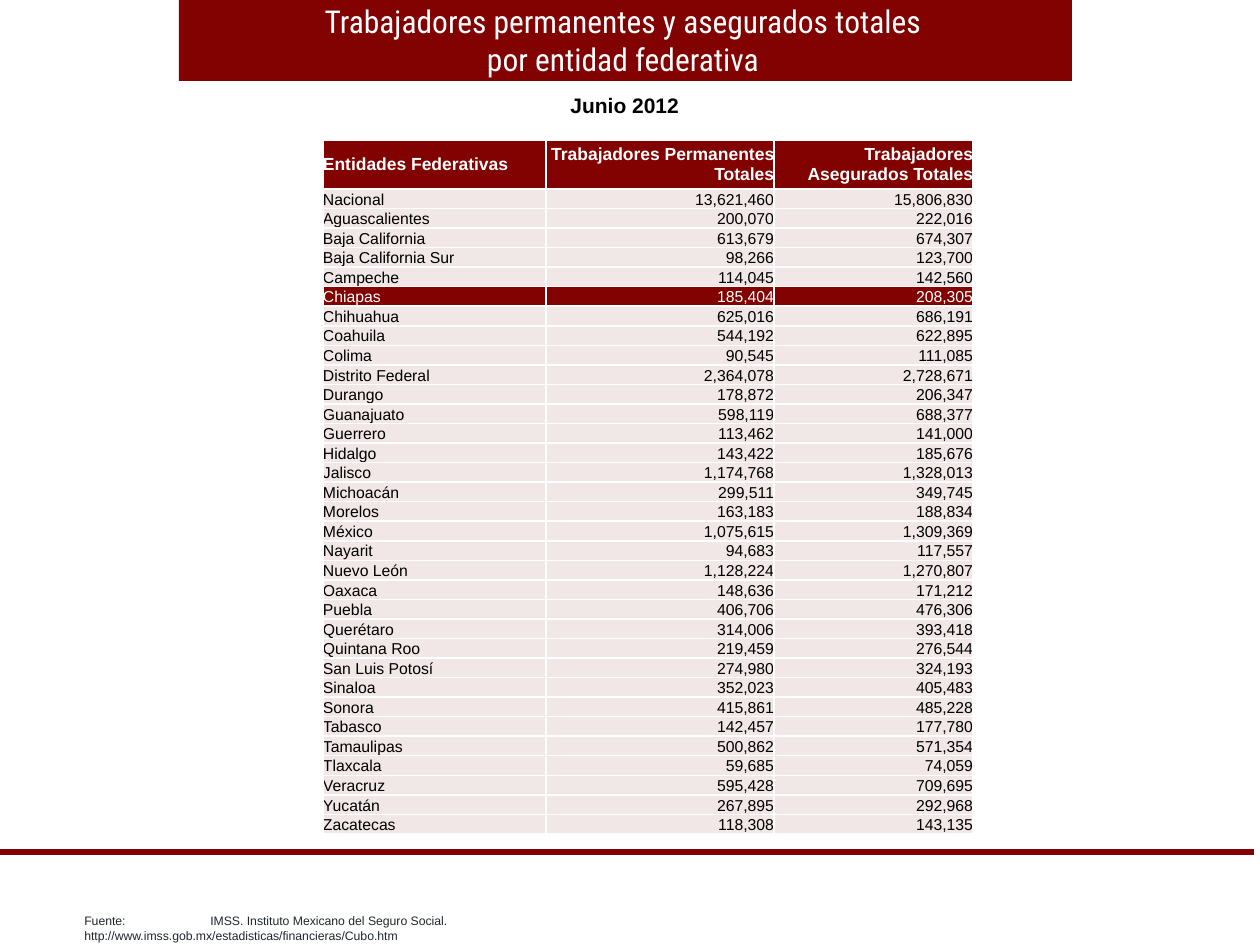
from lxml.etree import SubElement
from pptx import Presentation
from pptx.dml.color import RGBColor
from pptx.enum.shapes import MSO_SHAPE as Shape
from pptx.enum.text import MSO_ANCHOR as Anchor, MSO_AUTO_SIZE as Auto, PP_ALIGN as Align
from pptx.oxml.ns import qn
from pptx.util import Pt

SCALE = 914400 / 126
WINE, PALE, WHITE, BLACK, INK = "820101", "F1E7E7", "FFFFFF", "000000", "21272E"
HEADS = [
    "Entidades Federativas",
    "Trabajadores Permanentes Totales",
    "Trabajadores Asegurados Totales",
]
STATES = [
    ("Nacional", 13621460, 15806830),
    ("Aguascalientes", 200070, 222016),
    ("Baja California", 613679, 674307),
    ("Baja California Sur", 98266, 123700),
    ("Campeche", 114045, 142560),
    ("Chiapas", 185404, 208305),
    ("Chihuahua", 625016, 686191),
    ("Coahuila", 544192, 622895),
    ("Colima", 90545, 111085),
    ("Distrito Federal", 2364078, 2728671),
    ("Durango", 178872, 206347),
    ("Guanajuato", 598119, 688377),
    ("Guerrero", 113462, 141000),
    ("Hidalgo", 143422, 185676),
    ("Jalisco", 1174768, 1328013),
    ("Michoacán", 299511, 349745),
    ("Morelos", 163183, 188834),
    ("México", 1075615, 1309369),
    ("Nayarit", 94683, 117557),
    ("Nuevo León", 1128224, 1270807),
    ("Oaxaca", 148636, 171212),
    ("Puebla", 406706, 476306),
    ("Querétaro", 314006, 393418),
    ("Quintana Roo", 219459, 276544),
    ("San Luis Potosí", 274980, 324193),
    ("Sinaloa", 352023, 405483),
    ("Sonora", 415861, 485228),
    ("Tabasco", 142457, 177780),
    ("Tamaulipas", 500862, 571354),
    ("Tlaxcala", 59685, 74059),
    ("Veracruz", 595428, 709695),
    ("Yucatán", 267895, 292968),
    ("Zacatecas", 118308, 143135),
]


def px(n):
    return round(n * SCALE)


def tint(fill, color):
    fill.solid()
    fill.fore_color.rgb = RGBColor.from_string(color)


def assign(obj, values):
    for name, value in values.items():
        setattr(obj, name, value)


def style(para, color, size, align=Align.LEFT, name="Arial", bold=False):
    para.alignment = align
    assign(para.font, {"size": Pt(size), "name": name, "bold": bold})
    tint(para.font.fill, color)


def bar(slide, box):
    shape = slide.shapes.add_shape(Shape.RECTANGLE, *map(px, box))
    shape.shadow.inherit = False
    tint(shape.fill, WINE)
    shape.line.fill.background()


def label(slide, box, lines, wrap=True, tab=None, **look):
    frame = slide.shapes.add_textbox(*map(px, box)).text_frame
    assign(frame, {"word_wrap": wrap, "auto_size": Auto.SHAPE_TO_FIT_TEXT})
    frame.text = "\n".join(lines)
    for para in frame.paragraphs:
        if tab:
            tabs = SubElement(para._p.get_or_add_pPr(), qn("a:tabLst"))
            SubElement(tabs, qn("a:tab"), pos=str(px(tab)), algn="l")
        style(para, **look)


def edge(cell):
    """Draw thin white lines on the four sides of a cell."""
    props = cell._tc.get_or_add_tcPr()
    for side in ("lnL", "lnR", "lnT", "lnB"):
        line = SubElement(props, qn(f"a:{side}"), w=str(Pt(1)))
        fill = SubElement(line, qn("a:solidFill"))
        SubElement(fill, qn("a:srgbClr"), val=WHITE)


def put(cell, text, fill, anchor, **look):
    assign(cell, {f"margin_{side}": 0 for side in ("left", "right", "top", "bottom")})
    assign(cell, {"vertical_anchor": anchor, "text": text})
    edge(cell)
    tint(cell.fill, fill)
    style(cell.text_frame.paragraphs[0], **look)


def grid(slide, box, widths, head):
    count = len(STATES)
    table = slide.shapes.add_table(count + 1, len(widths), *map(px, box)).table
    assign(table, {"first_row": False, "horz_banding": False})
    for col, width in zip(table.columns, widths):
        col.width = px(width)
    step = (box[3] - head) / count
    for i, row in enumerate(table.rows):
        row.height = px(step if i else head)

    aligns = [Align.LEFT, Align.RIGHT, Align.RIGHT]
    for c, text in enumerate(HEADS):
        put(table.cell(0, c), text, WINE, Anchor.MIDDLE,
            color=WHITE, size=10, bold=True, align=aligns[c])
    for r, (state, *totals) in enumerate(STATES, 1):
        fill, color = (WINE, WHITE) if state == "Chiapas" else (PALE, BLACK)
        for c, text in enumerate([state, *(f"{n:,}" for n in totals)]):
            put(table.cell(r, c), text, fill, Anchor.BOTTOM,
                color=color, size=9, align=aligns[c])


def main():
    deck = Presentation()
    assign(deck, {"slide_width": px(1260), "slide_height": px(945)})
    slide = deck.slides.add_slide(deck.slide_layouts[6])
    bar(slide, (179, 0, 893, 81))
    bar(slide, (0, 849, 1254, 6))
    label(slide, (558, 86, 135, 38), ["Junio 2012"], wrap=False,
          color=BLACK, size=12, bold=True)
    source = ("Fuente:\tIMSS. Instituto Mexicano del Seguro Social. "
              "http://www.imss.gob.mx/estadisticas/financieras/Cubo.htm")
    label(slide, (72, 907, 640, 28), [source], tab=126, color=INK, size=7)
    title = ["Trabajadores permanentes y asegurados totales", "por entidad federativa"]
    label(slide, (179, -4, 888, 89), title, color=WHITE, size=18,
          align=Align.CENTER, name="Roboto Condensed")
    grid(slide, (323, 140, 650, 695), (223, 228, 199), 49)
    deck.save("out.pptx")


if __name__ == "__main__":
    main()
